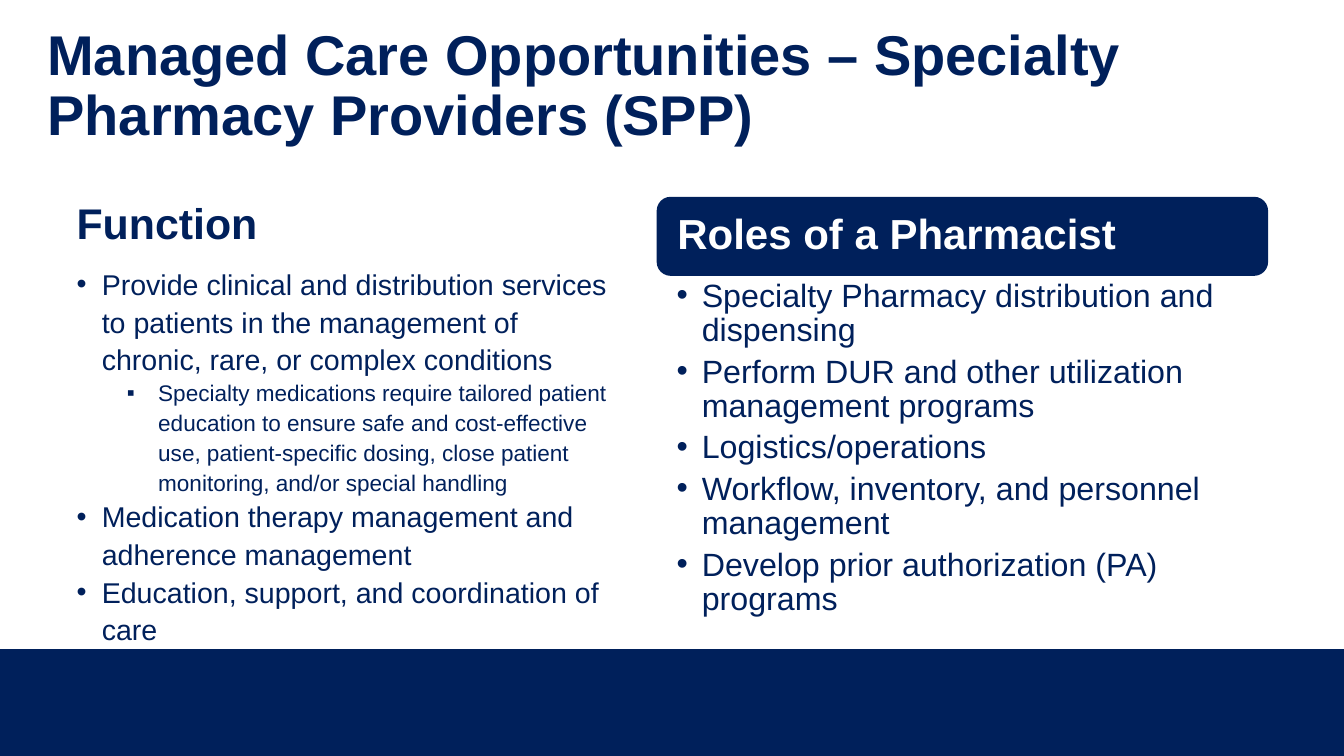
from dataclasses import dataclass

from pptx import Presentation
from pptx.dml.color import RGBColor
from pptx.enum.shapes import MSO_SHAPE as Shape
from pptx.enum.text import MSO_ANCHOR as Anchor, PP_ALIGN as Align
from pptx.oxml.ns import qn
from pptx.util import Inches, Pt


@dataclass(frozen=True)
class Theme:
    navy = RGBColor(0x00, 0x20, 0x5B)
    white = RGBColor(0xFF, 0xFF, 0xFF)
    face = "Arial"
    title = Pt(40)
    function_heading = Pt(30.6)
    function_item = Pt(20.4)
    function_detail = Pt(16.1)
    roles_heading = Pt(30)
    roles_item = Pt(23)


THEME = Theme()

FUNCTIONS = [
    (0, "Provide clinical and distribution services to patients in the management of chronic, rare, or complex conditions"),
    (1, "Specialty medications require tailored patient education to ensure safe and cost-effective use, patient-specific dosing, close patient monitoring, and/or special handling"),
    (0, "Medication therapy management and adherence management"),
    (0, "Education, support, and coordination of care"),
]
ROLES = [
    "Specialty Pharmacy distribution and dispensing",
    "Perform DUR and other utilization management programs",
    "Logistics/operations",
    "Workflow, inventory, and personnel management",
    "Develop prior authorization (PA) programs",
]


def apply(target, values):
    for name, value in values.items():
        setattr(target, name, value)


def set_frame(frame, insets=(0, 0, 0, 0), anchor=Anchor.TOP):
    sides = ("margin_left", "margin_top", "margin_right", "margin_bottom")
    apply(frame, {"word_wrap": True, "vertical_anchor": anchor})
    apply(frame, {side: Inches(inset) for side, inset in zip(sides, insets)})


def add_text_box(page, box, **frame_format):
    frame = page.shapes.add_textbox(*map(Inches, box)).text_frame
    set_frame(frame, **frame_format)
    return frame


def add_block(page, shape_type, box):
    block = page.shapes.add_shape(shape_type, *map(Inches, box))
    block.shadow.inherit = False
    block.fill.solid()
    block.fill.fore_color.rgb = THEME.navy
    block.line.color.rgb = THEME.navy
    block.line.width = Pt(1)
    return block


def write(para, text, size, spacing, color=THEME.navy, bold=False):
    apply(para, {"alignment": Align.LEFT, "line_spacing": spacing})
    span = para.add_run()
    span.text = text
    apply(span.font, {"name": THEME.face, "size": size, "bold": bold})
    span.font.color.rgb = color


def add_bullet(para, symbol, left, hanging):
    properties = para._p.get_or_add_pPr()
    properties.set("marL", str(Inches(left)))
    properties.set("indent", str(-Inches(hanging)))
    font = properties.makeelement(qn("a:buFont"), {"typeface": THEME.face})
    mark = properties.makeelement(qn("a:buChar"), {"char": symbol})
    properties.extend([font, mark])


def add_footer(page, box):
    add_block(page, Shape.RECTANGLE, box).line.fill.background()


def add_title(page, box):
    frame = add_text_box(page, box, anchor=Anchor.MIDDLE)
    write(frame.paragraphs[0], "Managed Care Opportunities – Specialty Pharmacy Providers (SPP)",
          THEME.title, 0.9, bold=True)


def add_functions(page, box):
    levels = [
        ("•", 0.25, 0.25, THEME.function_item),
        ("▪", 0.81, 0.31, THEME.function_detail),
    ]
    frame = add_text_box(page, box)
    heading = frame.paragraphs[0]
    heading.space_after = Pt(11)
    write(heading, "Function", THEME.function_heading, 1.1, bold=True)
    for level, text in FUNCTIONS:
        symbol, left, hanging, size = levels[level]
        para = frame.add_paragraph()
        para.level = level
        add_bullet(para, symbol, left, hanging)
        write(para, text, size, 1.1)


def add_roles(page, box):
    left, top, width, height = box
    header_height = 0.77
    header = add_block(page, Shape.ROUNDED_RECTANGLE, (left, top, width, header_height))
    header.adjustments[0] = 0.17
    set_frame(header.text_frame, (0.16, 0.12, 0.16, 0.12), Anchor.MIDDLE)
    write(header.text_frame.paragraphs[0], "Roles of a Pharmacist",
          THEME.roles_heading, 0.9, THEME.white, True)

    list_box = (left, top + header_height, width, height - header_height)
    frame = add_text_box(page, list_box, insets=(0.19, 0.04, 0.23, 0.04))
    for index, text in enumerate(ROLES):
        para = frame.add_paragraph() if index else frame.paragraphs[0]
        para.space_after = Pt(4.6)
        add_bullet(para, "•", 0.25, 0.25)
        write(para, text, THEME.roles_item, 0.9)


def main():
    deck = Presentation()
    apply(deck, {"slide_width": Inches(13.33), "slide_height": Inches(7.5)})
    page = deck.slides.add_slide(deck.slide_layouts[6])
    add_footer(page, (0, 6.44, 13.33, 1.06))
    add_title(page, (0.47, 0.14, 12.51, 1.45))
    add_functions(page, (0.76, 1.9, 5.4, 4.61))
    add_roles(page, (6.52, 1.96, 6.05, 4.16))
    deck.save("out.pptx")


if __name__ == "__main__":
    main()
